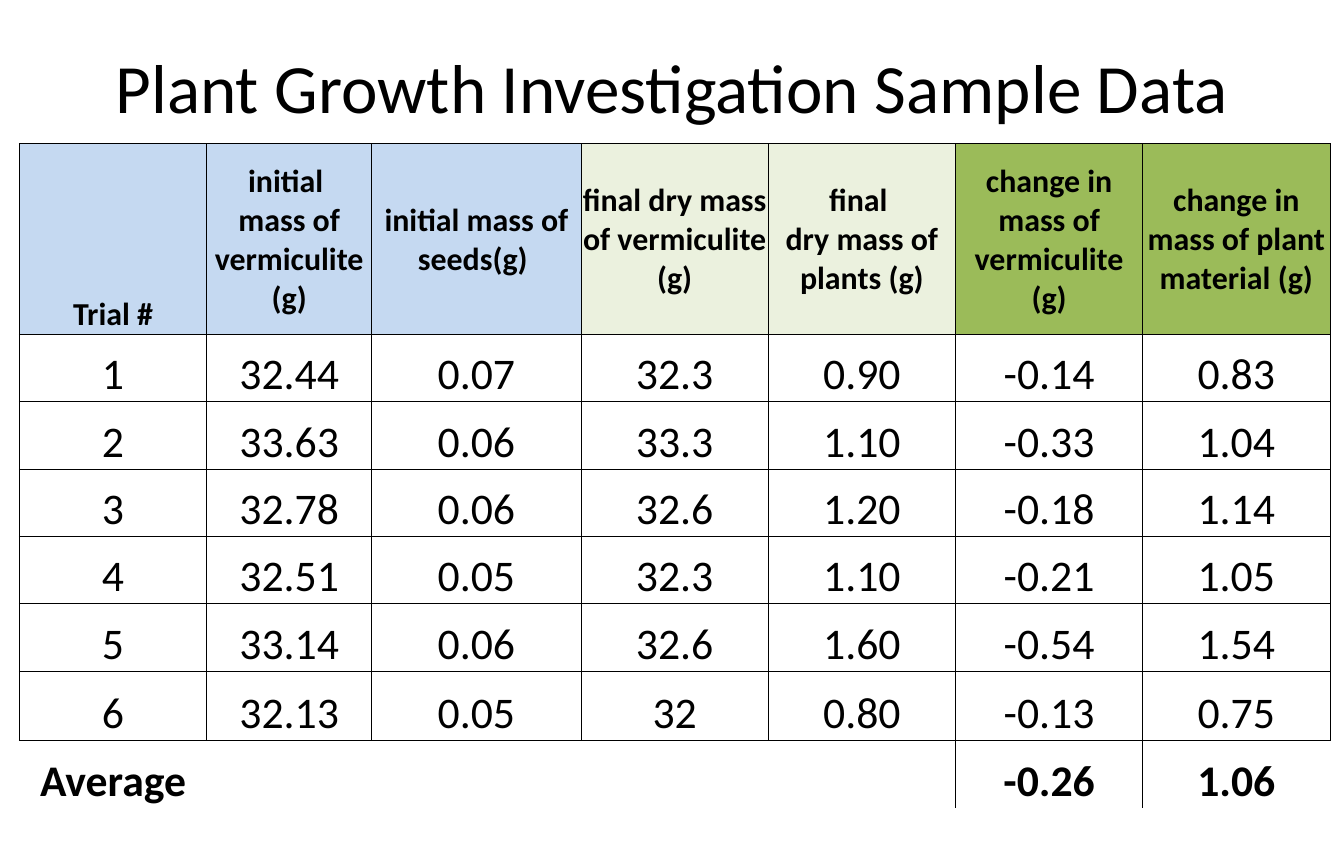
from dataclasses import dataclass

from lxml import etree
from pptx import Presentation
from pptx.dml.color import RGBColor
from pptx.enum.text import MSO_ANCHOR, MSO_AUTO_SIZE, PP_ALIGN
from pptx.oxml.ns import qn
from pptx.util import Cm, Pt

CENTER = PP_ALIGN.CENTER
MIDDLE, BOTTOM = MSO_ANCHOR.MIDDLE, MSO_ANCHOR.BOTTOM
NO_AUTOFIT = MSO_AUTO_SIZE.NONE

BLACK = RGBColor(0x00, 0x00, 0x00)
BLUE = RGBColor(0xC5, 0xD9, 0xF1)
PALE_GREEN = RGBColor(0xEB, 0xF1, 0xDE)
GREEN = RGBColor(0x9B, 0xBB, 0x59)

FONT = "Calibri"
THIN, THICK = 0.5, 1.0


@dataclass(frozen=True)
class Column:
    heading: str
    width: float
    fill: RGBColor
    values: tuple[str, ...]
    average: str = ""
    anchor: MSO_ANCHOR = MIDDLE


COLUMNS = [
    Column("Trial #", 5.59, BLUE, ("1", "2", "3", "4", "5", "6"), "Average", BOTTOM),
    Column("initial \nmass of vermiculite\n(g)", 4.93, BLUE,
           ("32.44", "33.63", "32.78", "32.51", "33.14", "32.13")),
    Column("initial mass of seeds(g) ", 6.25, BLUE,
           ("0.07", "0.06", "0.06", "0.05", "0.06", "0.05")),
    Column("final dry mass of vermiculite\n(g)", 5.59, PALE_GREEN,
           ("32.3", "33.3", "32.6", "32.3", "32.6", "32")),
    Column("final \ndry mass of plants (g)", 5.59, PALE_GREEN,
           ("0.90", "1.10", "1.20", "1.10", "1.60", "0.80")),
    Column("change in mass of vermiculite (g)", 5.59, GREEN,
           ("-0.14", "-0.33", "-0.18", "-0.21", "-0.54", "-0.13"), "-0.26"),
    Column("change in mass of plant material (g)", 5.59, GREEN,
           ("0.83", "1.04", "1.14", "1.05", "1.54", "0.75"), "1.06"),
]
ROW_HEIGHTS = [5.69] + [2.01] * 5 + [2.08, 2.01]
AVERAGE_ROW = len(ROW_HEIGHTS) - 1
FIRST_AVERAGE = 5  # first column with a computed average


def write_text(frame, text: str, *, size: float, bold: bool = False) -> None:
    """Fill a text frame with centred paragraphs, one per line of text."""
    frame.text = text
    for para in frame.paragraphs:
        para.alignment = CENTER
        for span in para.runs:
            span.font.name = FONT
            span.font.size = Pt(size)
            span.font.bold = bold
            span.font.color.rgb = BLACK


def border_widths(row: int, column: int) -> dict[str, float]:
    """Give the line width of each side of a cell; 0 means no line."""
    if row == AVERAGE_ROW:
        return {
            "lnL": THIN if column >= FIRST_AVERAGE else 0,
            "lnR": THIN if FIRST_AVERAGE - 1 <= column < len(COLUMNS) - 1 else 0,
            "lnT": THICK,
            "lnB": 0,
        }
    return {
        "lnL": THICK if column == 0 else THIN,
        "lnR": THIN,
        "lnT": THICK if row == 0 else THIN,
        "lnB": THICK if row == AVERAGE_ROW - 1 else THIN,
    }


def draw_borders(cell, widths: dict[str, float]) -> None:
    properties = cell._tc.get_or_add_tcPr()
    for side, width in widths.items():
        line = etree.SubElement(properties, qn(f"a:{side}"), w=str(Pt(width)))
        if width:
            fill = etree.SubElement(line, qn("a:solidFill"))
            etree.SubElement(fill, qn("a:srgbClr"), val=str(BLACK))
        else:
            etree.SubElement(line, qn("a:noFill"))


def format_cell(cell, row: int, column: int) -> None:
    """Write and style one cell by its place in the table."""
    spec = COLUMNS[column]
    cell.margin_left = cell.margin_right = cell.margin_top = Cm(0.05)
    cell.margin_bottom = 0
    draw_borders(cell, border_widths(row, column))
    if row == 0:
        cell.vertical_anchor = spec.anchor
        cell.fill.solid()
        cell.fill.fore_color.rgb = spec.fill
        write_text(cell.text_frame, spec.heading, size=27, bold=True)
        return
    cell.vertical_anchor = BOTTOM
    cell.fill.background()
    is_average = row == AVERAGE_ROW
    text = spec.average if is_average else spec.values[row - 1]
    write_text(cell.text_frame, text, size=37, bold=is_average)


def add_title(page) -> None:
    title = page.shapes.title
    title.left, title.top = Cm(2.01), Cm(0.46)
    title.width, title.height = Cm(36.12), Cm(4.22)
    frame = title.text_frame
    frame.auto_size = NO_AUTOFIT
    frame.word_wrap = True
    frame.vertical_anchor = MIDDLE
    frame.margin_left = frame.margin_right = Cm(0.38)
    frame.margin_top = frame.margin_bottom = Cm(0.18)
    write_text(frame, "Plant Growth Investigation Sample Data", size=58.5)


def add_data_table(page) -> None:
    total_width = sum(column.width for column in COLUMNS)
    table = page.shapes.add_table(
        len(ROW_HEIGHTS), len(COLUMNS), Cm(0.58), Cm(4.29),
        Cm(total_width), Cm(sum(ROW_HEIGHTS))).table
    table.first_row = table.horz_banding = False
    for index, column in enumerate(COLUMNS):
        table.columns[index].width = Cm(column.width)
    for row, height in enumerate(ROW_HEIGHTS):
        table.rows[row].height = Cm(height)
        for column in range(len(COLUMNS)):
            format_cell(table.cell(row, column), row, column)


def main() -> None:
    deck = Presentation()
    deck.slide_width, deck.slide_height = Cm(40.13), Cm(25.37)
    page = deck.slides.add_slide(deck.slide_layouts[5])  # title only
    add_title(page)
    add_data_table(page)
    deck.save("out.pptx")


if __name__ == "__main__":
    main()
